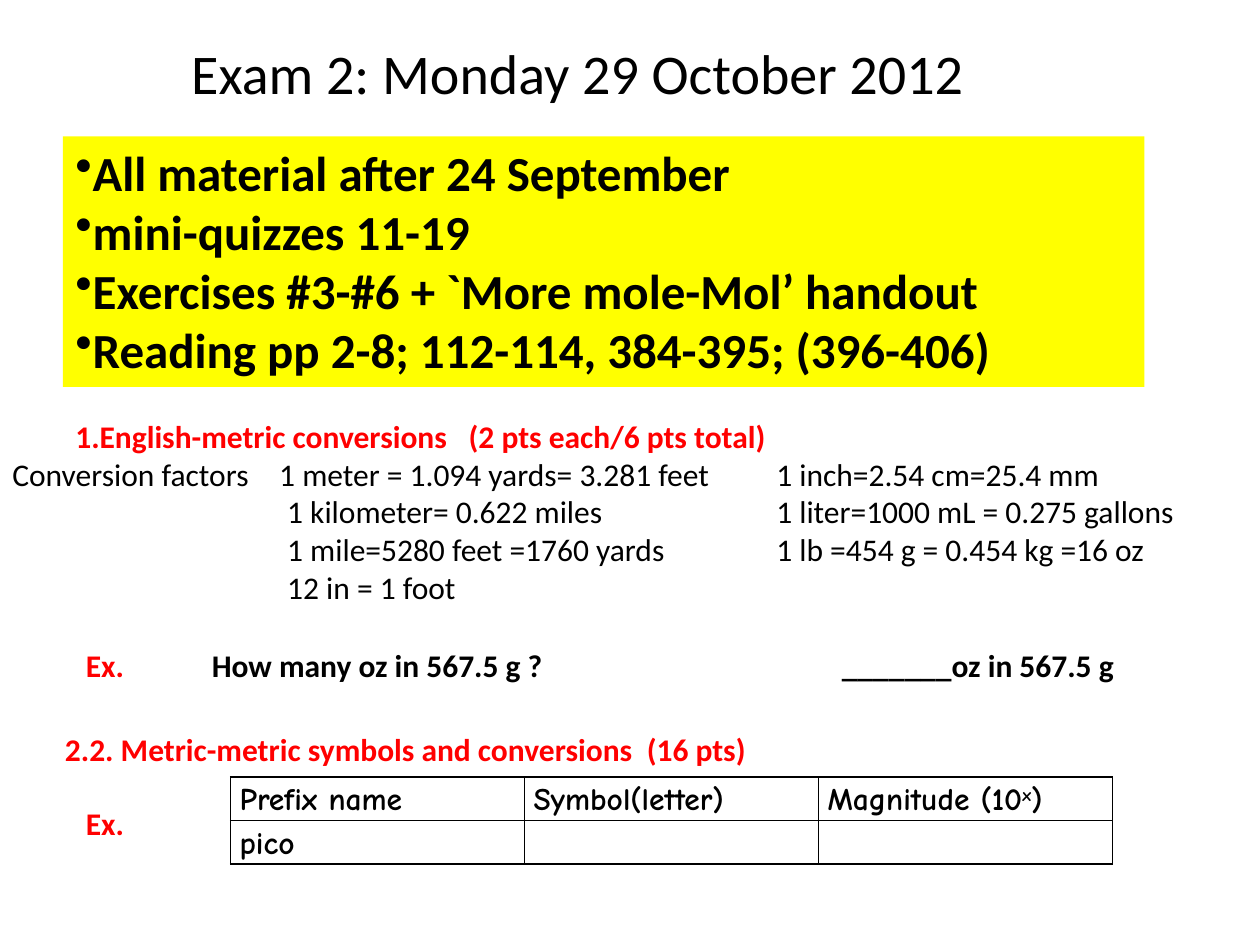
from dataclasses import dataclass

from lxml.etree import SubElement as Sub
from pptx import Presentation
from pptx.dml.color import RGBColor as Rgb
from pptx.enum.shapes import MSO_SHAPE as Kind
from pptx.enum.text import MSO_ANCHOR as Anchor, PP_ALIGN as Align
from pptx.oxml.ns import qn
from pptx.util import Cm, Pt


@dataclass(frozen=True)
class Theme:
    """Colours, faces and type sizes."""
    ink: str = "000000"
    red: str = "FF0000"
    gold: str = "FFFF00"
    face: str = "Calibri"
    hand: str = "Comic Neue"
    head: int = 32
    list: int = 28
    body: int = 18


@dataclass(frozen=True)
class Line:
    """One paragraph: runs as (text, colour), with tab stops in cm."""
    runs: tuple
    bold: bool = True
    size: int = 18
    tabs: tuple = ()
    mark: tuple = ()
    left: float = 0


@dataclass(frozen=True)
class Box:
    """One text area in cm."""
    x: float
    y: float
    w: float
    h: float
    lines: tuple
    wrap: bool = True
    fill: str = ""


T = Theme()
LABEL = (("Ex.", T.red),)
FACTS = (
    ("Conversion factors\t1 meter = 1.094 yards= 3.281 feet\t1 inch=2.54 cm=25.4 mm", 5.38),
    ("\t1 kilometer= 0.622 miles\t1 liter=1000 mL = 0.275 gallons", 5.54),
    ("\t1 mile=5280 feet =1760 yards\t1 lb =454 g = 0.454 kg =16 oz", 5.54),
    ("\t12 in = 1 foot", 5.54),
)
TOPICS = (
    "All material after 24 September",
    "mini-quizzes 11-19",
    "Exercises #3-#6 + `More mole-Mol’ handout",
    "Reading pp 2-8; 112-114, 384-395; (396-406)",
)
BOXES = (
    Box(1.27, 2.75, 21.8, 5.05, tuple(
        Line(((t, T.ink),), size=T.list, mark=("a:buChar", "char", "•")) for t in TOPICS),
        fill=T.gold),
    Box(0, 8.28, 24.15, 4.88, (
        Line((("English-metric conversions\t(2 pts each/6 pts total)", T.red),),
             tabs=(9.2,), mark=("a:buAutoNum", "type", "arabicPeriod"), left=1.27),
        *(Line(((t, T.ink),), False, tabs=(tab, 15.4)) for t, tab in FACTS))),
    Box(1.48, 12.9, 21.6, 1.02, (
        Line((*LABEL, ("\tHow many oz in 567.5 g ?\t_______oz in 567.5 g", T.ink)),
             tabs=(2.54, 15.24)),)),
    Box(1.06, 14.6, 14.35, 1.02, (
        Line((("2.2. Metric-metric symbols and conversions\t(16 pts)", T.red),),
             tabs=(11.73,)),), wrap=False),
    Box(1.48, 16.09, 2.12, 1.02, (Line(LABEL),)),
)
ROWS = (("Prefix name", "Symbol(letter)", "Magnitude (10"), ("pico", "", ""))


def write(para, text: str, *, size: int = T.body, color: str = T.ink,
          bold: bool = False, face: str = T.face):
    """Add a formatted run and return it."""
    run = para.add_run()
    run.text = text
    font = run.font
    font.size, font.bold, font.name = Pt(size), bold, face
    font.color.rgb = Rgb.from_string(color)
    return run


def fill_line(para, line: Line) -> None:
    """Set the bullet, tabs and runs of a paragraph."""
    para.alignment = Align.LEFT
    props = para._p.get_or_add_pPr()
    if line.left:
        props.set("marL", str(Cm(line.left)))
        props.set("indent", "0")
    if line.mark:
        tag, key, val = line.mark
        Sub(props, qn(tag)).set(key, val)
    if line.tabs:
        stops = Sub(props, qn("a:tabLst"))
        for pos in line.tabs:
            Sub(stops, qn("a:tab"), pos=str(Cm(pos)), algn="l")
    for text, color in line.runs:
        write(para, text, size=line.size, color=color, bold=line.bold)


def draw_box(slide, box: Box) -> None:
    """Draw a text area, filled if it has a colour."""
    rect = [Cm(v) for v in (box.x, box.y, box.w, box.h)]
    if box.fill:
        shape = slide.shapes.add_shape(Kind.RECTANGLE, *rect)
        shape.shadow.inherit = False
        shape.fill.solid()
        shape.fill.fore_color.rgb = Rgb.from_string(box.fill)
        shape.line.fill.background()
    else:
        shape = slide.shapes.add_textbox(*rect)
    frame = shape.text_frame
    frame.word_wrap = box.wrap
    frame.vertical_anchor = Anchor.TOP
    for i, line in enumerate(box.lines):
        fill_line(frame.add_paragraph() if i else frame.paragraphs[0], line)


def edge(cell) -> None:
    """Give a cell thin black borders and no fill."""
    props = cell._tc.get_or_add_tcPr()
    for side in "LRTB":
        rule = Sub(props, qn(f"a:ln{side}"), w=str(Pt(1)))
        Sub(Sub(rule, qn("a:solidFill")), qn("a:srgbClr"), val=T.ink)
    cell.fill.background()


def draw_grid(slide) -> None:
    """Draw the prefix table."""
    grid = slide.shapes.add_table(
        2, 3, Cm(4.65), Cm(15.66), Cm(17.78), Cm(1.76)).table
    grid.first_row = grid.horz_banding = False
    for row, texts in zip(grid.rows, ROWS):
        row.height = Cm(0.88)
        for cell, text in zip(row.cells, texts):
            cell.margin_left = cell.margin_right = Cm(0.18)
            cell.margin_top = cell.margin_bottom = 0
            para = cell.text_frame.paragraphs[0]
            para.line_spacing = 1.15
            para.font.size = Pt(T.body)
            if text:
                write(para, text, bold=True, face=T.hand)
            edge(cell)
    para = grid.cell(0, 2).text_frame.paragraphs[0]
    power = write(para, "x", bold=True, face=T.hand)
    power.font._element.set("baseline", "30000")
    write(para, ")", bold=True, face=T.hand)


def draw_title(slide, text: str) -> None:
    """Place and format the title."""
    title = slide.shapes.title
    title.left, title.top, title.width, title.height = (
        Cm(v) for v in (3.6, 0.64, 19.9, 1.62))
    frame = title.text_frame
    frame.vertical_anchor = Anchor.TOP
    para = frame.paragraphs[0]
    para.alignment = Align.LEFT
    write(para, text, size=T.head)


def main() -> None:
    """Build and save the slide."""
    deck = Presentation()
    deck.slide_width, deck.slide_height = Cm(25.4), Cm(19.05)
    slide = deck.slides.add_slide(deck.slide_layouts[5])
    draw_title(slide, "Exam 2: Monday 29 October 2012")
    for box in BOXES:
        draw_box(slide, box)
    draw_grid(slide)
    deck.save("out.pptx")


if __name__ == "__main__":
    main()
